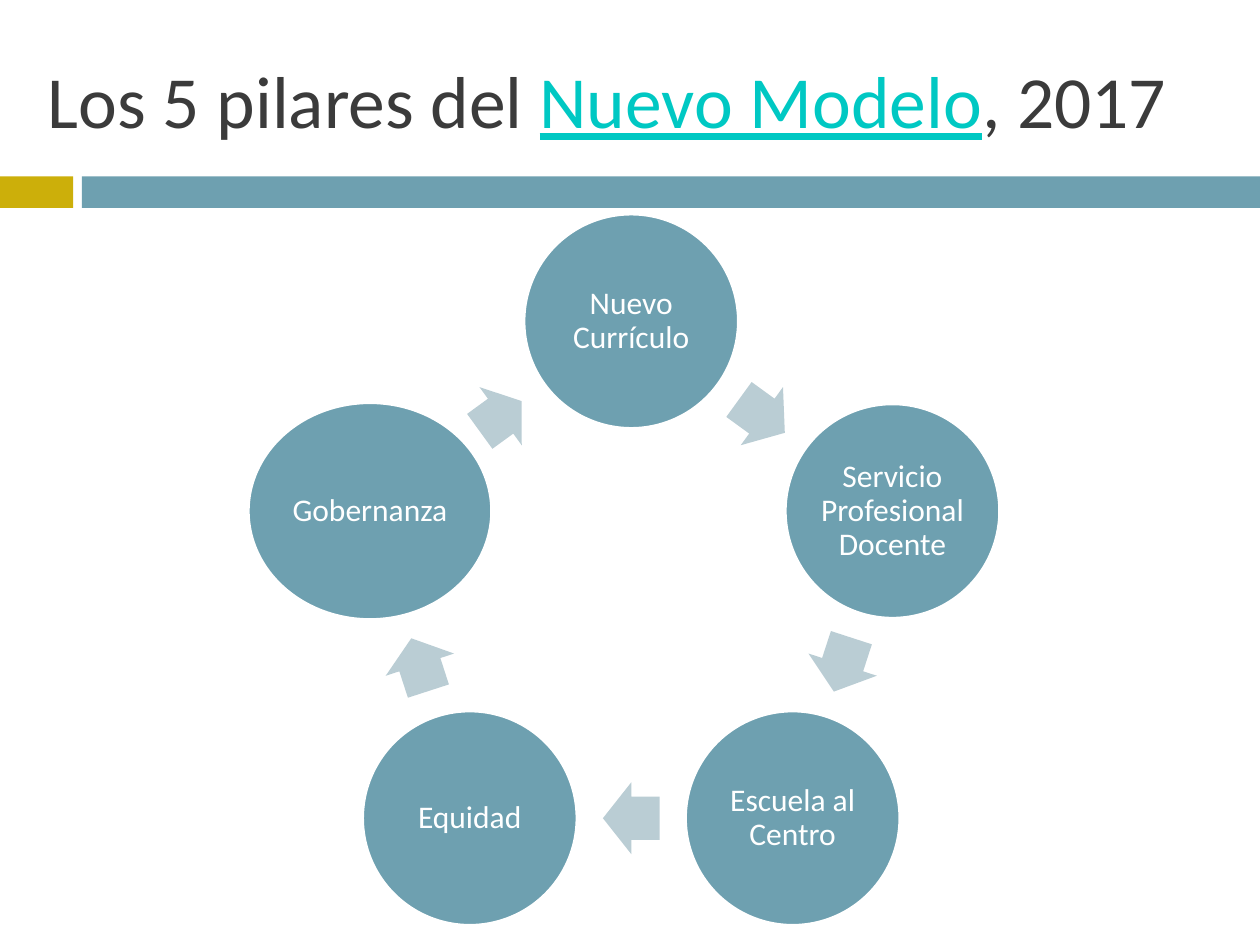
from dataclasses import dataclass
from math import cos, radians, sin

from pptx import Presentation
from pptx.dml.color import RGBColor
from pptx.enum.shapes import MSO_SHAPE
from pptx.enum.text import MSO_ANCHOR, MSO_AUTO_SIZE, PP_ALIGN
from pptx.util import Inches, Pt

TEAL = RGBColor(0x6E, 0xA0, 0xB0)
PALE_TEAL = RGBColor(0xBA, 0xCD, 0xD4)
GOLD = RGBColor(0xCC, 0xAF, 0x0A)
LINK = RGBColor(0x00, 0xC8, 0xC3)
DARK = RGBColor(0x3B, 0x3B, 0x3B)
WHITE = RGBColor(0xFF, 0xFF, 0xFF)
FONT = "Calibri"

# Ring geometry, in inches
CENTER_X, CENTER_Y, RADIUS = 5.01, 4.73, 2.18
ARROW_HEIGHT = 0.57


@dataclass
class Pillar:
    name: str
    width: float = 1.7
    height: float = 1.7
    arrow_length: float = 0.45


PILLARS = [
    Pillar("Nuevo Currículo"),
    Pillar("Servicio Profesional Docente"),
    Pillar("Escuela al Centro"),
    Pillar("Equidad", arrow_length=0.44),
    Pillar("Gobernanza", 1.93, 1.72, 0.41),
]


def add_filled(s, kind: MSO_SHAPE, x: float, y: float, w: float, h: float,
               color: RGBColor):
    sp = s.shapes.add_shape(kind, Inches(x), Inches(y), Inches(w), Inches(h))
    sp.shadow.inherit = False
    sp.fill.solid()
    sp.fill.fore_color.rgb = color
    sp.line.fill.background()
    return sp


def add_on_ring(s, kind: MSO_SHAPE, angle: float, radius: float,
                w: float, h: float, color: RGBColor):
    """Centre a shape on the ring; the angle runs clockwise from the top."""
    x = CENTER_X + radius * sin(radians(angle))
    y = CENTER_Y - radius * cos(radians(angle))
    return add_filled(s, kind, x - w / 2, y - h / 2, w, h, color)


def add_run(p, text: str, size: float, color: RGBColor):
    r = p.add_run()
    r.text = text
    r.font.name = FONT
    r.font.size = Pt(size)
    r.font.color.rgb = color
    return r


def add_pillar(s, pillar: Pillar, angle: float) -> None:
    sp = add_on_ring(s, MSO_SHAPE.OVAL, angle, RADIUS,
                     pillar.width, pillar.height, TEAL)
    sp.line.color.rgb = WHITE
    sp.line.width = Pt(1.5)
    tf = sp.text_frame
    tf.word_wrap = True
    tf.vertical_anchor = MSO_ANCHOR.MIDDLE
    tf.margin_left = tf.margin_right = Inches(0.03)
    tf.margin_top = tf.margin_bottom = Inches(0.03)
    p = tf.paragraphs[0]
    p.alignment = PP_ALIGN.CENTER
    p.line_spacing = 0.9
    add_run(p, pillar.name, 18, WHITE)


def add_arrow(s, angle: float, length: float) -> None:
    sp = add_on_ring(s, MSO_SHAPE.RIGHT_ARROW, angle, RADIUS * cos(radians(36)),
                     length, ARROW_HEIGHT, PALE_TEAL)
    sp.adjustments[0] = 0.6
    sp.adjustments[1] = 0.5
    sp.rotation = angle


def add_title(s) -> None:
    title = s.shapes.title
    title.left, title.top = Inches(0.28), Inches(0.25)
    title.width, title.height = Inches(9.31), Inches(1.08)
    tf = title.text_frame
    tf.word_wrap = True
    tf.auto_size = MSO_AUTO_SIZE.NONE
    tf.vertical_anchor = MSO_ANCHOR.MIDDLE
    p = tf.paragraphs[0]
    p.alignment = PP_ALIGN.LEFT
    add_run(p, "Los 5 pilares del ", 42, DARK)
    add_run(p, "Nuevo Modelo", 42, LINK).font.underline = True
    add_run(p, ", 2017", 42, DARK)


def main() -> None:
    prs = Presentation()
    prs.slide_width, prs.slide_height = Inches(10), Inches(7.5)
    s = prs.slides.add_slide(prs.slide_layouts[5])

    # Title and the band below it
    add_title(s)
    add_filled(s, MSO_SHAPE.RECTANGLE, 0, 1.4, 0.58, 0.25, GOLD)
    add_filled(s, MSO_SHAPE.RECTANGLE, 0.65, 1.4, 9.35, 0.25, TEAL)

    # Cycle: each pillar is followed by an arrow halfway to the next
    step = 360 / len(PILLARS)
    for i, pillar in enumerate(PILLARS):
        add_pillar(s, pillar, i * step)
        add_arrow(s, (i + 0.5) * step, pillar.arrow_length)

    prs.save("out.pptx")


if __name__ == "__main__":
    main()
